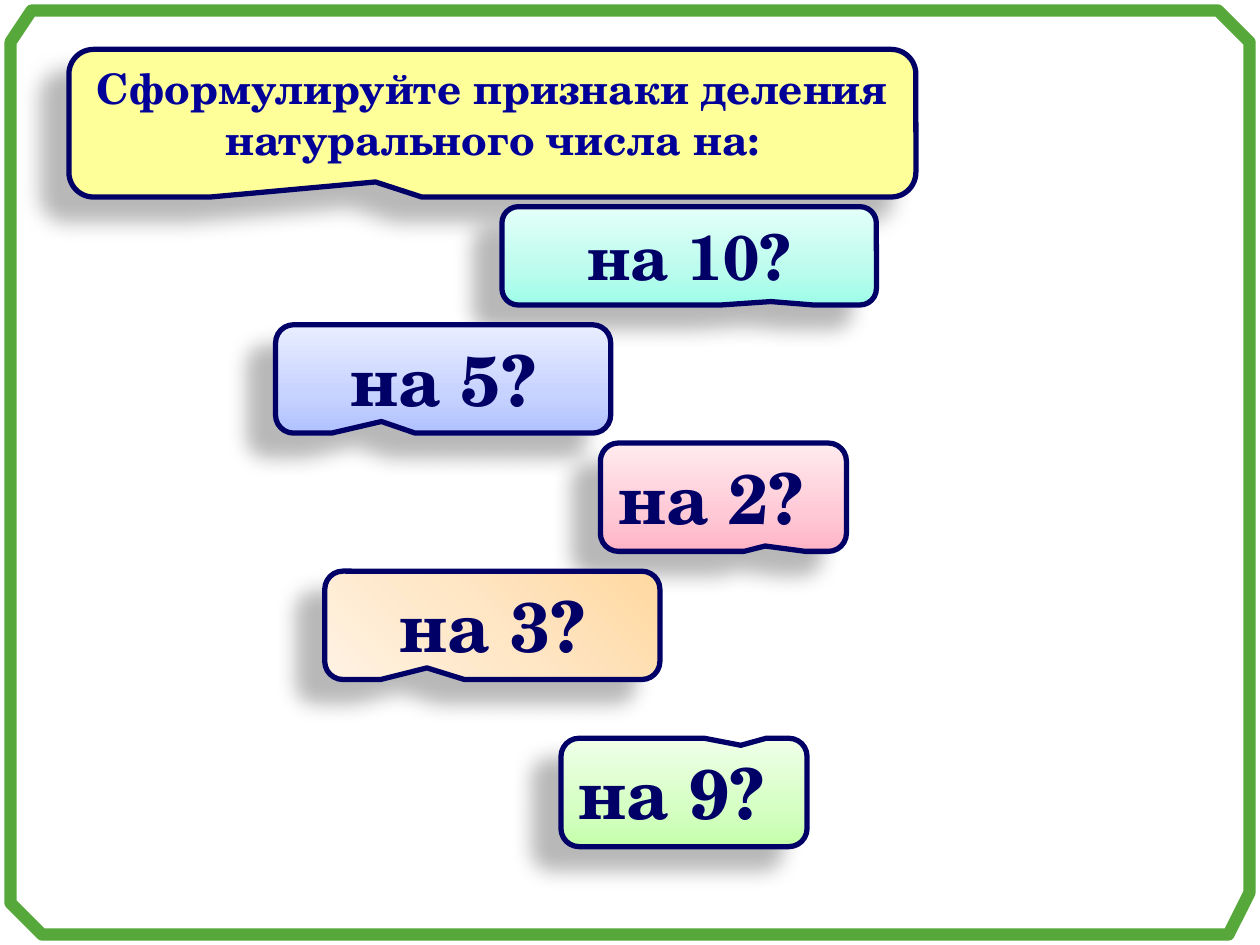
from copy import deepcopy

from lxml import etree
from pptx import Presentation
from pptx.dml.color import RGBColor
from pptx.enum import shapes, text
from pptx.oxml import ns
from pptx.util import Pt

FONT = "TeX Gyre Schola"
NAVY = RGBColor(0x00, 0x00, 0x66)
BLUE = RGBColor(0x00, 0x00, 0x99)
GREEN = RGBColor(0x55, 0xA8, 0x39)
YELLOW = RGBColor(0xFF, 0xFF, 0x99)
MINT = [RGBColor(0x9D, 0xFD, 0xE8), RGBColor(0xBB, 0xFC, 0xED), RGBColor(0xE4, 0xFF, 0xF9)]
SKY = [RGBColor(0xB0, 0xC1, 0xFF), RGBColor(0xC6, 0xD2, 0xFF), RGBColor(0xE9, 0xEE, 0xFF)]
PINK = [RGBColor(0xFF, 0xB3, 0xC6), RGBColor(0xFF, 0xC9, 0xD6), RGBColor(0xFF, 0xEB, 0xEF)]
PEACH = [RGBColor(0xFF, 0xD8, 0xA0), RGBColor(0xFF, 0xE6, 0xC5), RGBColor(0xFF, 0xF2, 0xE3)]
LIME = [RGBColor(0xC4, 0xFF, 0xAA), RGBColor(0xD5, 0xFF, 0xC3), RGBColor(0xEF, 0xFF, 0xE8)]
MID = text.PP_ALIGN.CENTER
LEFT = text.PP_ALIGN.LEFT


def shade(shape):
    """Give the shape a soft shadow to the lower left."""
    shape.shadow.inherit = False
    effects = shape.element.spPr.find(ns.qn("a:effectLst"))
    outer = etree.SubElement(effects, ns.qn("a:outerShdw"), blurRad=str(Pt(11.8)),
                             dist=str(Pt(19.7)), dir=str(141 * 60000),
                             algn="tr", rotWithShape="0")
    color = etree.SubElement(outer, ns.qn("a:srgbClr"), val="000000")
    etree.SubElement(color, ns.qn("a:alpha"), val="28000")


def blend(shape, colors, half, angle):
    """Fill with three colours, the second one at the share half."""
    fill = shape.fill
    fill.gradient()
    fill.gradient_angle = angle
    stops = shape.element.spPr.find(".//" + ns.qn("a:gsLst"))
    stops.insert(1, deepcopy(stops[0]))
    for stop, color, place in zip(fill.gradient_stops, colors, (0, half, 1)):
        stop.color.rgb = color
        stop.position = place


def callout(slide, box, tip, words, size, color=NAVY, align=MID, fit=False):
    shape = slide.shapes.add_shape(shapes.MSO_SHAPE.ROUNDED_RECTANGULAR_CALLOUT,
                                   *map(Pt, box))
    for i, value in enumerate((*tip, 0.167)):
        shape.adjustments[i] = value
    shape.line.color.rgb = NAVY
    shape.line.width = Pt(3)
    shade(shape)
    frame = shape.text_frame
    frame.word_wrap = True
    frame.vertical_anchor = text.MSO_ANCHOR.TOP
    if fit:
        frame.margin_left = frame.margin_right = 0
        frame.auto_size = text.MSO_AUTO_SIZE.SHAPE_TO_FIT_TEXT
    para = frame.paragraphs[0]
    para.alignment = align
    run = para.add_run()
    run.text = words
    font = run.font
    font.name, font.size, font.bold = FONT, Pt(size), True
    font.color.rgb = color
    return shape


def border(slide):
    """Draw the green frame with cut corners."""
    points = [(6, 24), (6, 516), (24, 534), (702, 534),
              (714, 510), (714, 24), (696, 6), (18, 6)]
    pen = slide.shapes.build_freeform(*points[0], scale=Pt(1))
    pen.add_line_segments(points[1:], close=True)
    shape = pen.convert_to_shape()
    shape.shadow.inherit = False
    shape.fill.background()
    shape.line.color.rgb = GREEN
    shape.line.width = Pt(7)


def main():
    deck = Presentation()
    deck.slide_width, deck.slide_height = Pt(720), Pt(540)
    slide = deck.slides.add_slide(deck.slide_layouts[6])
    border(slide)

    title = callout(slide, (39.4, 28.2, 484, 84.4), (-0.138, 0.398),
                    "Сформулируйте признаки деления натурального числа на:", 24, BLUE)
    title.fill.solid()
    title.fill.fore_color.rgb = YELLOW

    # number, box, tip, size, alignment, fit, colours, middle stop, angle
    asks = [
        (10, (286.8, 118.1, 214, 56.2), (0.218, 0.465), 36, MID, False, MINT, 0.35, 90),
        (5, (157.5, 185.6, 191.5, 61.9), (-0.184, 0.393), 40, MID, True, SKY, 0.35, 90),
        (2, (343.1, 253.2, 140.6, 61.9), (0.17, 0.451), 40, LEFT, False, PINK, 0.35, 90),
        (3, (185.6, 326.4, 191.5, 61.9), (-0.195, 0.393), 40, MID, True, PEACH, 0.5, 225),
        (9, (320.6, 421.9, 140.6, 61.9), (0.231, -0.435), 40, LEFT, False, LIME, 0.35, 90),
    ]
    for number, box, tip, size, align, fit, colors, half, angle in asks:
        shape = callout(slide, box, tip, f"на {number}?", size, align=align, fit=fit)
        blend(shape, colors, half, angle)

    deck.save("out.pptx")


if __name__ == "__main__":
    main()
